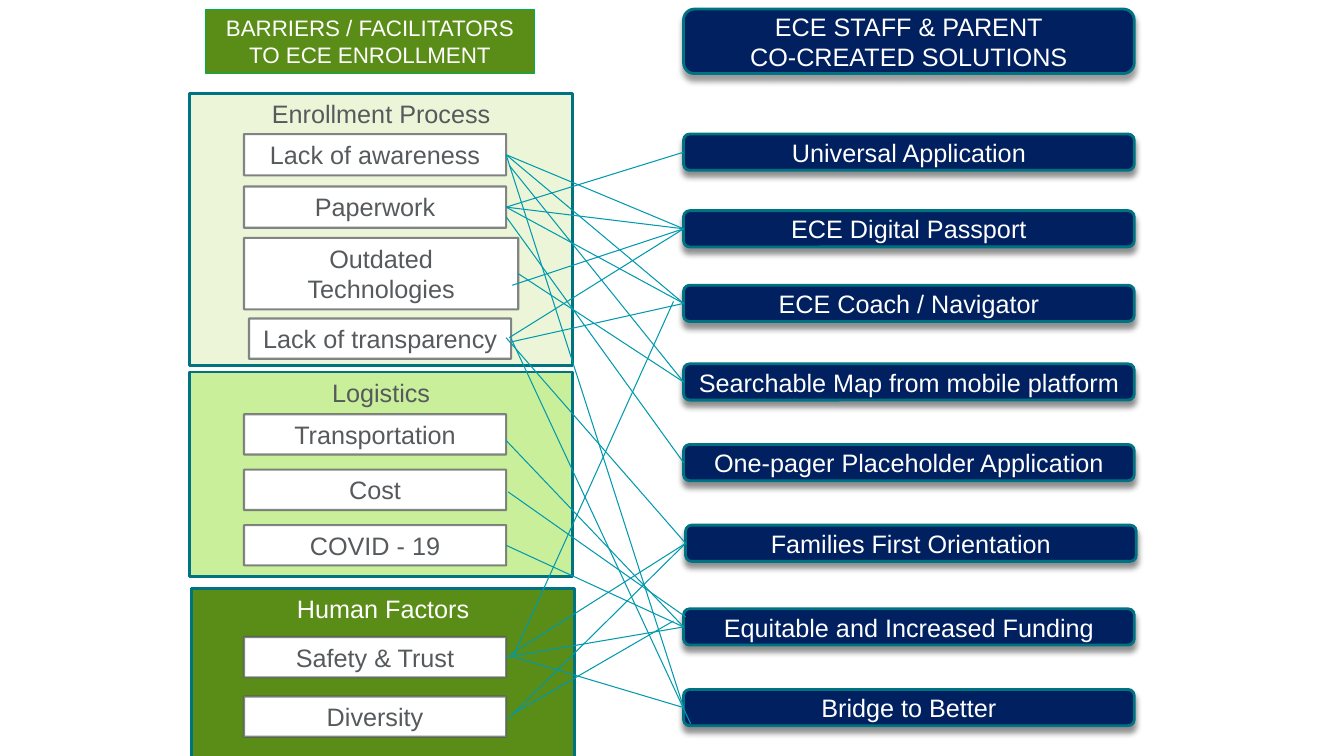
from lxml import etree
from pptx import Presentation
from pptx.dml.color import RGBColor
from pptx.enum.shapes import MSO_CONNECTOR, MSO_SHAPE
from pptx.enum.text import MSO_ANCHOR, PP_ALIGN
from pptx.oxml.ns import qn
from pptx.util import Pt

WHITE = RGBColor(0xFF, 0xFF, 0xFF)
GRAY = RGBColor(0x56, 0x5A, 0x5C)
TEAL = RGBColor(0x00, 0x73, 0x83)
LINK_TEAL = RGBColor(0x00, 0x99, 0xAD)
NAVY = RGBColor(0x00, 0x20, 0x60)
GREEN = RGBColor(0x59, 0x8D, 0x17)
BRIGHT_GREEN = RGBColor(0x00, 0xB0, 0x50)
LIGHT_GREEN = RGBColor(0xCA, 0xEF, 0x9B)
PALE_GREEN = RGBColor(0xEC, 0xF5, 0xD8)

PX = 9144
SLIDE = (1333, 750)

BARRIER_HEADING = ("BARRIERS / FACILITATORS TO ECE ENROLLMENT", (204, 9, 326, 64))
SOLUTION_HEADING = ("ECE STAFF & PARENT\vCO-CREATED SOLUTIONS", (678, 9, 447, 64))

GROUPS = [
    ("Human Factors", (190, 584, 380, 171), GREEN, WHITE),
    ("Logistics", (188, 369, 380, 203), LIGHT_GREEN, GRAY),
    ("Enrollment Process", (188, 93, 380, 270), PALE_GREEN, GRAY),
]

BARRIERS = {
    "Lack of awareness": (242, 133, 260, 41),
    "Paperwork": (242, 185, 260, 41),
    "Outdated Technologies": (242, 236, 272, 71),
    "Lack of transparency": (247, 316, 260, 40),
    "Transportation": (242, 411, 260, 40),
    "Cost": (242, 466, 260, 40),
    "COVID - 19": (242, 521, 260, 40),
    "Safety & Trust": (242, 632, 260, 40),
    "Diversity": (242, 691, 260, 40),
}

SOLUTION_SIZE = (447, 36)
SOLUTIONS = {
    "Universal Application": (678, 133),
    "ECE Digital Passport": (678, 209),
    "ECE Coach / Navigator": (678, 283),
    "Searchable Map from mobile platform": (678, 361),
    "One-pager Placeholder Application": (678, 441),
    "Families First Orientation": (680, 521),
    "Equitable and Increased Funding": (678, 604),
    "Bridge to Better": (678, 684),
}

# Each link: barrier, loose end at the solution, loose end at the barrier
LINKS = {
    "Universal Application": [("Paperwork", None, None)],
    "ECE Digital Passport": [
        ("Lack of awareness", None, None),
        ("Paperwork", None, None),
        ("Outdated Technologies", None, (508, 283)),
        ("Lack of transparency", None, (505, 335)),
    ],
    "ECE Coach / Navigator": [
        ("Paperwork", None, None),
        ("Lack of awareness", None, None),
        ("Lack of transparency", None, (508, 339)),
        ("Safety & Trust", (668, 299), (509, 651)),
    ],
    "Searchable Map from mobile platform": [
        ("Lack of awareness", None, (505, 164)),
        ("Outdated Technologies", None, None),
    ],
    "One-pager Placeholder Application": [("Paperwork", None, (502, 215))],
    "Families First Orientation": [
        ("Lack of transparency", None, (502, 335)),
        ("Diversity", None, (504, 713)),
        ("Safety & Trust", None, (505, 650)),
    ],
    "Equitable and Increased Funding": [
        ("Diversity", (668, 616), (509, 708)),
        ("Safety & Trust", None, None),
        ("COVID - 19", None, None),
        ("Cost", (680, 612), (504, 488)),
        ("Transportation", None, (502, 437)),
    ],
    "Bridge to Better": [
        ("Lack of transparency", (685, 718), None),
        ("Lack of awareness", None, None),
        ("Safety & Trust", None, (507, 651)),
    ],
}

LEFT_SIDE, RIGHT_SIDE = 1, 3

presentation = Presentation()
presentation.slide_width, presentation.slide_height = (n * PX for n in SLIDE)
slide = presentation.slides.add_slide(presentation.slide_layouts[6])


def add_alpha(color, percent):
    etree.SubElement(color, qn("a:alpha"), val=str(percent * 1000))


def add_box(text, at, *, fill, line, line_width=2, color=WHITE, size=18,
            preset=MSO_SHAPE.RECTANGLE, anchor=MSO_ANCHOR.TOP,
            line_alpha=None, shadow_alpha=None):
    box = slide.shapes.add_shape(preset, *(n * PX for n in at))
    box.fill.solid()
    box.fill.fore_color.rgb = fill
    box.line.color.rgb = line
    box.line.width = Pt(line_width)
    if line_alpha:
        add_alpha(box.line._ln.find(".//" + qn("a:srgbClr")), line_alpha)
    box.shadow.inherit = False
    if shadow_alpha:
        effects = box._element.spPr.find(qn("a:effectLst"))
        shadow = etree.SubElement(effects, qn("a:outerShdw"), blurRad=str(Pt(4)),
                                  dist=str(Pt(4)), dir="5400000", rotWithShape="0")
        add_alpha(etree.SubElement(shadow, qn("a:srgbClr"), val="000000"), shadow_alpha)
    frame = box.text_frame
    frame.word_wrap = True
    frame.vertical_anchor = anchor
    paragraph = frame.paragraphs[0]
    paragraph.text = text
    paragraph.alignment = PP_ALIGN.CENTER
    for run in paragraph.runs:
        run.font.name = "Arial"
        run.font.size = Pt(size)
        run.font.color.rgb = color
    return box


def add_solution(text, at, shadow_alpha=43):
    return add_box(text, at, fill=NAVY, line=TEAL, preset=MSO_SHAPE.ROUNDED_RECTANGLE,
                   anchor=MSO_ANCHOR.MIDDLE, shadow_alpha=shadow_alpha)


def add_link(solution, barrier, start, end):
    start_x, start_y = start or (0, 0)
    end_x, end_y = end or (0, 0)
    link = slide.shapes.add_connector(MSO_CONNECTOR.STRAIGHT, start_x * PX, start_y * PX,
                                      end_x * PX, end_y * PX)
    if start is None:
        link.begin_connect(solution, LEFT_SIDE)
    if end is None:
        link.end_connect(barrier, RIGHT_SIDE)
    link.line.color.rgb = LINK_TEAL
    link.line.width = Pt(0.75)
    etree.SubElement(link._element.spPr, qn("a:effectLst"))


for title, at, fill, color in GROUPS:
    add_box(title, at, fill=fill, line=TEAL, color=color)

add_box(*BARRIER_HEADING, fill=GREEN, line=BRIGHT_GREEN, line_width=0.75, size=16)
add_solution(*SOLUTION_HEADING, shadow_alpha=38)

barriers = {
    text: add_box(text, at, fill=WHITE, line=GRAY, line_width=1.5, color=GRAY, line_alpha=73)
    for text, at in BARRIERS.items()
}
solutions = {text: add_solution(text, at + SOLUTION_SIZE) for text, at in SOLUTIONS.items()}

for solution, links in LINKS.items():
    for barrier, start, end in links:
        add_link(solutions[solution], barriers[barrier], start, end)

presentation.save("out.pptx")
